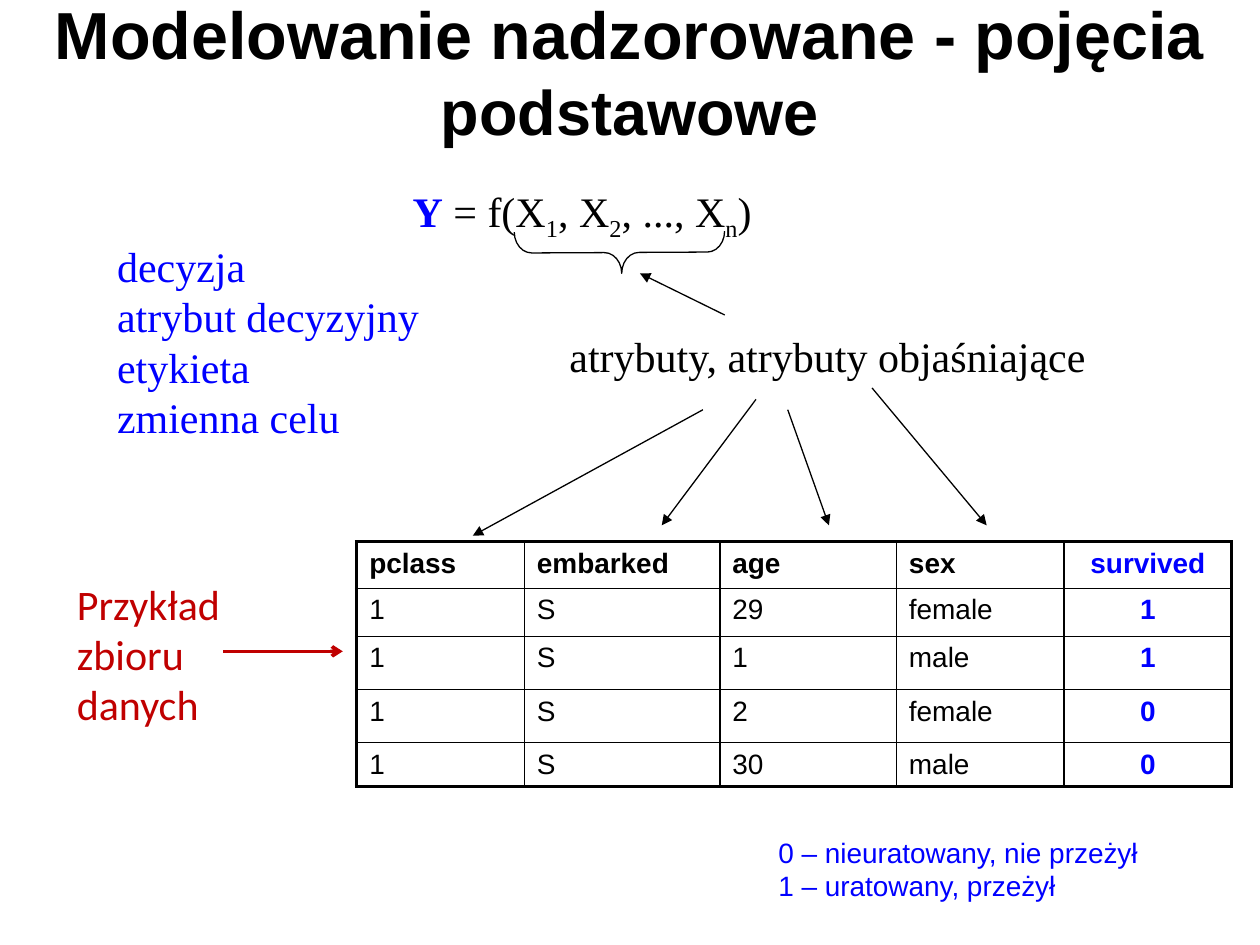
"""Build a slide that introduces the basic terms of supervised modelling."""
from dataclasses import dataclass
from typing import Optional

from lxml import etree
from pptx import Presentation
from pptx.dml.color import RGBColor
from pptx.enum.shapes import MSO_CONNECTOR, MSO_SHAPE
from pptx.enum.text import MSO_ANCHOR, MSO_AUTO_SIZE, PP_ALIGN
from pptx.oxml.ns import qn
from pptx.util import Cm, Pt

LEFT, CENTER = PP_ALIGN.LEFT, PP_ALIGN.CENTER
TOP, MIDDLE = MSO_ANCHOR.TOP, MSO_ANCHOR.MIDDLE
GROW, FIXED = MSO_AUTO_SIZE.SHAPE_TO_FIT_TEXT, MSO_AUTO_SIZE.NONE
STRAIGHT, BRACE = MSO_CONNECTOR.STRAIGHT, MSO_SHAPE.LEFT_BRACE

BLACK, BLUE, RED = "000000", "0000FF", "C00000"
SANS, SERIF, HUMANIST = "Arial", "Times New Roman", "Calibri"
THIN, THICK = Pt(1), Pt(2.25)


@dataclass
class Run:
    """A stretch of text with its departures from the paragraph format."""
    text: str
    size: Optional[float] = None
    color: Optional[str] = None
    bold: Optional[bool] = None
    subscript: bool = False


@dataclass
class Label:
    """A text box with its place in centimetres and its format."""
    box: tuple
    paragraphs: list
    font: str
    size: float
    color: str = BLACK
    bold: bool = False
    align: PP_ALIGN = LEFT
    anchor: MSO_ANCHOR = TOP
    wrap: bool = False
    auto_size: MSO_AUTO_SIZE = GROW
    space_before: float = 0


@dataclass
class Arrow:
    """A straight arrow between two points in centimetres."""
    start: tuple
    end: tuple
    color: str = BLACK
    width: float = 0.75
    head: str = "triangle"


LABELS = [
    Label((0, 0.13, 25.4, 2.59),
          [[Run("Modelowanie nadzorowane - pojęcia "), Run("podstawowe", size=36)]],
          SANS, 38, bold=True, align=CENTER, anchor=MIDDLE, wrap=True, auto_size=FIXED),
    Label((2.11, 3.61, 19.25, 1.7),
          [[Run("Y", color=BLUE, bold=True), Run(" = f(X"), Run("1", subscript=True),
            Run(", X"), Run("2", subscript=True), Run(", ..., X"),
            Run("n", subscript=True), Run(")")]],
          SERIF, 24, align=CENTER, wrap=True, auto_size=FIXED, space_before=4.8),
    Label((15.44, 16.71, 7.85, 1.63),
          [[Run("0 – nieuratowany, nie przeżył")], [Run("1 – uratowany, przeżył")]],
          SANS, 16, BLUE),
    Label((2.11, 4.72, 6.65, 4.37),
          [[Run("decyzja")], [Run("atrybut decyzyjny")], [Run("etykieta")],
           [Run("zmienna celu")]],
          SERIF, 24, BLUE),
    Label((11.23, 6.53, 10.95, 1.27), [[Run("atrybuty, atrybuty objaśniające")]], SERIF, 24),
    Label((1.3, 11.53, 4.42, 3.33), [[Run("Przykład zbioru danych")]],
          HUMANIST, 24, RED, wrap=True),
]

ARROWS = [
    Arrow((14.17, 8.26), (9.53, 10.8)),
    Arrow((15.24, 8.05), (13.34, 10.59)),
    Arrow((15.88, 8.26), (16.71, 10.59)),
    Arrow((17.58, 7.82), (19.89, 10.59)),
    Arrow((14.61, 6.35), (12.9, 5.51)),
    Arrow((4.5, 13.13), (6.91, 13.13), RED, 2, "arrow"),
]

PASSENGERS = [
    ("pclass", "embarked", "age", "sex", "survived"),
    ("1", "S", "29", "female", "1"),
    ("1", "S", "1", "male", "1"),
    ("1", "S", "2", "female", "0"),
    ("1", "S", "30", "male", "0"),
]
COLUMN_WIDTHS = (3.38, 3.94, 3.56, 3.38, 3.38)
ROW_HEIGHTS = (0.94, 0.97, 1.07, 1.07, 0.66)


def rgb(color: str) -> RGBColor:
    """Turn a hex string into a colour."""
    return RGBColor.from_string(color)


def write_text(frame, paragraphs: list, *, font: str, size: float, color: str = BLACK,
               bold: bool = False, align: PP_ALIGN = LEFT, space_before: float = 0) -> None:
    """Fill a text frame with paragraphs of runs."""
    for index, runs in enumerate(paragraphs):
        paragraph = frame.add_paragraph() if index else frame.paragraphs[0]
        paragraph.alignment = align
        paragraph.space_before = Pt(space_before)
        for part in runs:
            run = paragraph.add_run()
            run.text = part.text
            run.font.name = font
            run.font.size = Pt(part.size or size)
            run.font.bold = bold if part.bold is None else part.bold
            run.font.color.rgb = rgb(part.color or color)
            if part.subscript:
                run.font._element.set("baseline", "-25000")


def add_label(slide, label: Label) -> None:
    """Place a text box on the slide."""
    frame = slide.shapes.add_textbox(*map(Cm, label.box)).text_frame
    frame.word_wrap = label.wrap
    frame.auto_size = label.auto_size
    frame.vertical_anchor = label.anchor
    write_text(frame, label.paragraphs, font=label.font, size=label.size, color=label.color,
               bold=label.bold, align=label.align, space_before=label.space_before)


def add_arrow(slide, arrow: Arrow) -> None:
    """Draw a connector with a head at its end."""
    connector = slide.shapes.add_connector(STRAIGHT, *map(Cm, arrow.start + arrow.end))
    connector.line.color.rgb = rgb(arrow.color)
    connector.line.width = Pt(arrow.width)
    properties = connector._element.spPr
    etree.SubElement(properties.find(qn("a:ln")), qn("a:tailEnd"), type=arrow.head)
    etree.SubElement(properties, qn("a:effectLst"))


def add_attribute_brace(slide) -> None:
    """Draw the brace under the explanatory attributes."""
    brace = slide.shapes.add_shape(BRACE, Cm(12.07), Cm(2.97), Cm(0.84), Cm(4.24))
    brace.rotation = 269.7
    brace.adjustments[0] = 0.417
    brace.adjustments[1] = 0.51
    brace.shadow.inherit = False
    brace.fill.background()
    brace.line.color.rgb = rgb(BLACK)
    brace.line.width = Pt(0.75)


def add_border(cell, side: str, width: int) -> None:
    """Add a solid black border on one side of a cell."""
    border = etree.SubElement(cell._tc.get_or_add_tcPr(), qn(f"a:ln{side}"), w=str(width))
    fill = etree.SubElement(border, qn("a:solidFill"))
    etree.SubElement(fill, qn("a:srgbClr"), val=BLACK)


def add_passenger_table(slide) -> None:
    """Draw the sample data set with a thick outer frame."""
    last_row, last_column = len(ROW_HEIGHTS) - 1, len(COLUMN_WIDTHS) - 1
    table = slide.shapes.add_table(
        len(ROW_HEIGHTS), len(COLUMN_WIDTHS), Cm(7.19), Cm(10.92),
        Cm(sum(COLUMN_WIDTHS)), Cm(sum(ROW_HEIGHTS))).table
    table.first_row = table.horz_banding = False
    for column, width in zip(table.columns, COLUMN_WIDTHS):
        column.width = Cm(width)
    for r, (height, values) in enumerate(zip(ROW_HEIGHTS, PASSENGERS)):
        table.rows[r].height = Cm(height)
        for c, value in enumerate(values):
            cell = table.cell(r, c)
            outer = {"L": c == 0, "R": c == last_column, "T": r == 0, "B": r == last_row}
            for side, is_outer in outer.items():
                add_border(cell, side, THICK if is_outer else THIN)
            cell.fill.background()
            decision = c == last_column
            write_text(cell.text_frame, [[Run(value)]], font=SANS, size=16,
                       color=BLUE if decision else BLACK, bold=decision or r == 0,
                       align=CENTER if decision else LEFT)


def main() -> None:
    """Assemble and save the slide."""
    deck = Presentation()
    deck.slide_width, deck.slide_height = Cm(25.4), Cm(19.05)
    slide = deck.slides.add_slide(deck.slide_layouts[6])
    add_passenger_table(slide)
    for label in LABELS:
        add_label(slide, label)
    for arrow in ARROWS:
        add_arrow(slide, arrow)
    add_attribute_brace(slide)
    deck.save("out.pptx")


if __name__ == "__main__":
    main()
